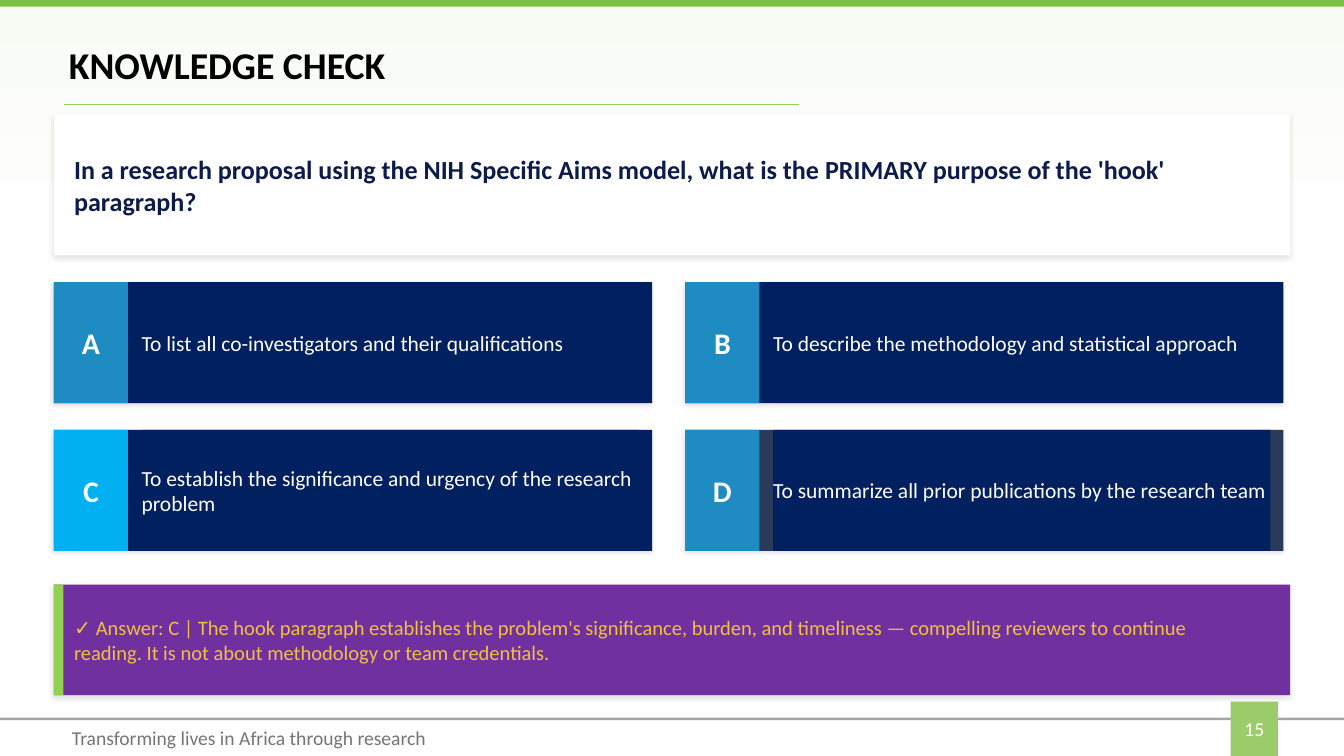
from dataclasses import dataclass
from lxml import etree
from pptx import Presentation
from pptx import util as u
from pptx.dml.color import RGBColor
from pptx.enum import shapes, text
from pptx.oxml.ns import qn


@dataclass(frozen=True)
class Theme:
    font: str = "Calibri"
    white: str = "FFFFFF"
    black: str = "000000"
    mist: str = "F8FBF4"
    rule: str = "A6A4A9"
    green: str = "7BC148"
    lime: str = "92D050"
    badge: str = "9ACD69"
    grey: str = "757575"
    ink: str = "0D1B4B"
    navy: str = "002060"
    slate: str = "2A3A5A"
    blue: str = "1E8BC3"
    sky: str = "00B0F0"
    purple: str = "7030A0"
    gold: str = "F0C040"
    title: float = 54
    ask: float = 37.3
    key: float = 42.7
    choice: float = 30.7
    reply: float = 29.3
    small: float = 28


class Deck:
    def __init__(self, theme):
        self.theme = theme
        self.prs = Presentation()
        self.prs.slide_width = u.Inches(26.67)
        self.prs.slide_height = u.Inches(15)
        self.slide = self.prs.slides.add_slide(self.prs.slide_layouts[6])

    def rect(self, box, fill, shade=False):
        item = self.slide.shapes.add_shape(
            shapes.MSO_SHAPE.RECTANGLE, *map(u.Inches, box))
        item.shadow.inherit = False
        item.line.fill.background()
        item.fill.solid()
        item.fill.fore_color.rgb = RGBColor.from_string(fill)
        if shade:
            self.shade(item)
        return item

    def shade(self, item):
        glow = item._element.spPr.find(qn("a:effectLst"))
        drop = etree.SubElement(
            glow, qn("a:outerShdw"), blurRad=str(u.Pt(8)), dist=str(u.Pt(3)),
            dir=str(135 * 60000), algn="bl", rotWithShape="0")
        tint = etree.SubElement(drop, qn("a:srgbClr"), val=self.theme.black)
        etree.SubElement(tint, qn("a:alpha"), val="12000")

    def fade(self, box, top, base, end):
        item = self.rect(box, base)
        item.fill.gradient()
        item.fill.gradient_angle = 270
        stops = item.fill.gradient_stops
        for stop, tone, place in zip(stops, (top, base), (0, end)):
            stop.color.rgb = RGBColor.from_string(tone)
            stop.position = place

    def line(self, start, end, color):
        item = self.slide.shapes.add_connector(
            shapes.MSO_CONNECTOR.STRAIGHT, *map(u.Inches, start + end))
        item.line.color.rgb = RGBColor.from_string(color)
        item.line.width = u.Pt(1)
        etree.SubElement(item._element.spPr, qn("a:effectLst"))

    def label(self, box, words, size, color, bold=False, mid=False, pad=(0, 0)):
        item = self.slide.shapes.add_textbox(*map(u.Inches, box))
        self.letter(item, words, size, color, bold, mid, pad)
        return item

    def letter(self, item, words, size, color, bold=False, mid=False, pad=(0, 0)):
        frame = item.text_frame
        frame.word_wrap = True
        frame.vertical_anchor = text.MSO_ANCHOR.MIDDLE
        frame.margin_left = frame.margin_right = u.Inches(pad[0])
        frame.margin_top = frame.margin_bottom = u.Inches(pad[1])
        frame.text = words
        para = frame.paragraphs[0]
        para.alignment = text.PP_ALIGN.CENTER if mid else text.PP_ALIGN.LEFT
        font = para.runs[0].font
        font.name = self.theme.font
        font.size = u.Pt(size)
        font.bold = bold
        font.color.rgb = RGBColor.from_string(color)

    def option(self, left, top, key, words, base, tab, panel):
        t = self.theme
        high = 2.4
        side = (left, top, 1.47, high)
        body = (left + 1.74, top, 9.87, high)
        self.rect((left, top, 11.87, high), base, shade=True)
        self.rect(side, tab)
        self.label(side, key, t.key, t.white, bold=True, mid=True)
        if panel:
            self.letter(self.rect(body, t.navy), words, t.choice, t.white)
        else:
            self.label(body, words, t.choice, t.white)


def main():
    t = Theme()
    deck = Deck(t)
    pad = (0.1, 0.05)

    deck.fade((0, 0, 26.67, 15), t.mist, t.white, 0.3)
    deck.rect((0, 14.24, 26.67, 0.05), t.rule)
    deck.rect((0, 0, 26.67, 0.13), t.green)
    deck.line((1.27, 2.07), (15.85, 2.07), t.lime)
    deck.label((1.33, 14.24, 9, 0.8),
               "Transforming lives in Africa through research",
               t.small, t.grey, pad=pad)
    page = deck.rect((24.42, 13.92, 0.94, 1.08), t.badge)
    deck.letter(page, "15", t.small, t.white, mid=True, pad=pad)
    head = deck.label((1.27, 0.83, 24.22, 1.02), "KNOWLEDGE CHECK",
                      t.title, t.black, bold=True, pad=pad)
    head.text_frame.paragraphs[0].line_spacing = 0.9

    deck.rect((1.07, 2.27, 24.53, 2.8), t.white, shade=True)
    deck.label((1.47, 2.27, 23.73, 2.8),
               "In a research proposal using the NIH Specific Aims model, "
               "what is the PRIMARY purpose of the 'hook' paragraph?",
               t.ask, t.ink, bold=True)

    options = [
        ("A", "To list all co-investigators and their qualifications",
         t.navy, t.blue, False),
        ("B", "To describe the methodology and statistical approach",
         t.navy, t.blue, False),
        ("C", "To establish the significance and urgency of the research problem",
         t.navy, t.sky, True),
        ("D", "To summarize all prior publications by the research team",
         t.slate, t.blue, True),
    ]
    for i, parts in enumerate(options):
        row, col = divmod(i, 2)
        deck.option(1.07 + col * 12.53, 5.6 + row * 2.93, *parts)

    deck.rect((1.07, 11.6, 24.53, 2.19), t.purple, shade=True)
    deck.rect((1.07, 11.6, 0.19, 2.19), t.lime)
    deck.label((1.47, 11.6, 23.2, 2.19),
               "✓ Answer: C | The hook paragraph establishes the problem's "
               "significance, burden, and timeliness — compelling reviewers to "
               "continue reading. It is not about methodology or team credentials.",
               t.reply, t.gold)

    deck.prs.save("out.pptx")


if __name__ == "__main__":
    main()
